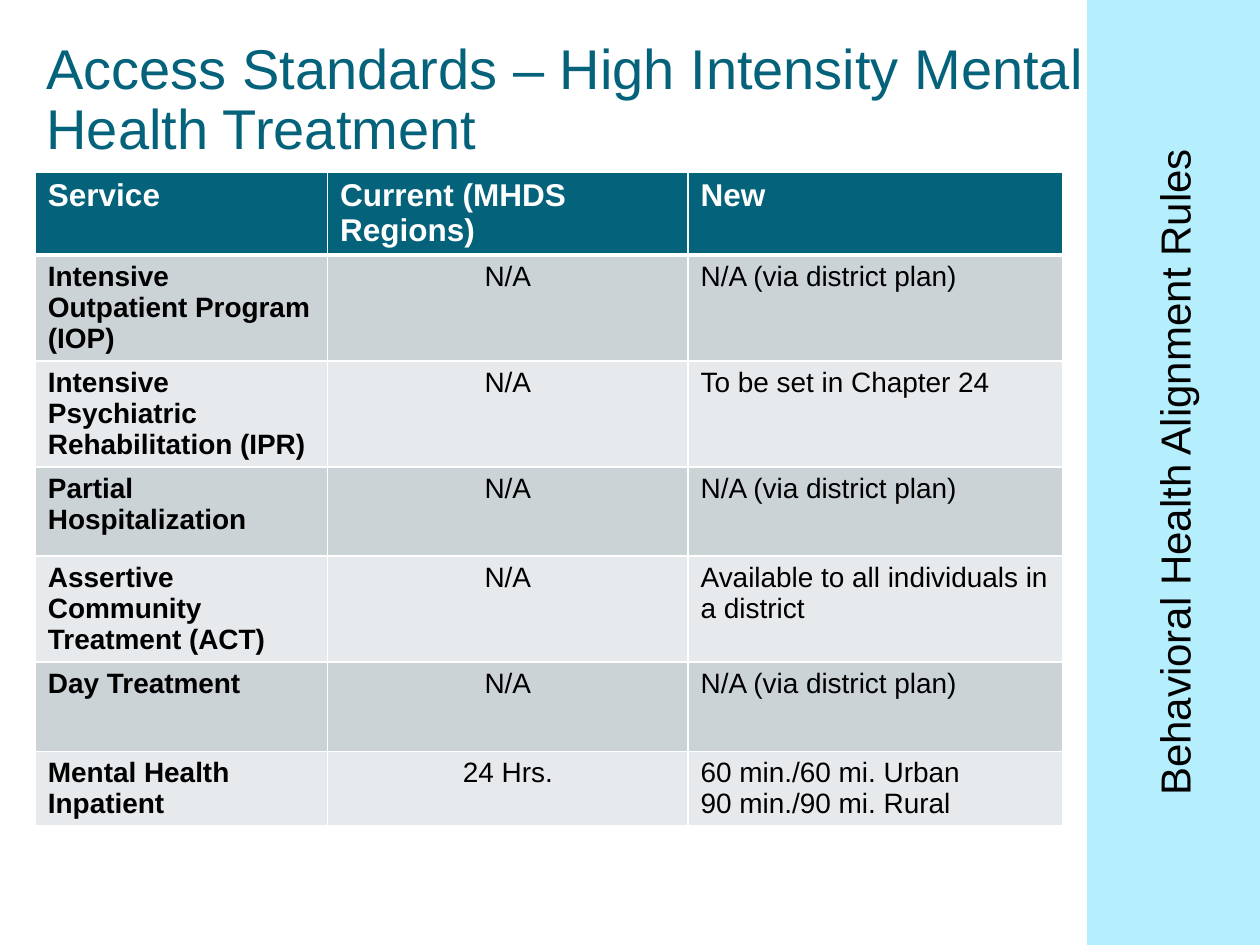
"""Build the access standards slide for high intensity mental health treatment."""
import pptx
import pptx.util
import pptx.dml.color
import pptx.enum.shapes
import pptx.enum.text
import pptx.oxml
import pptx.oxml.ns

Pt = pptx.util.Pt
ALIGN = pptx.enum.text.PP_ALIGN
ANCHOR = pptx.enum.text.MSO_ANCHOR

COLORS = {
    "teal": "04627A",
    "band": "CCD3D7",
    "light": "E7EAEC",
    "side": "B5EEFD",
    "white": "FFFFFF",
    "black": "000000",
}
FONT = "Arial"
TITLE = "Access Standards – High Intensity Mental Health Treatment"
SIDE_TITLE = "Behavioral Health Alignment Rules"
ROWS = [
    ("Service", "Current (MHDS Regions)", "New"),
    ("Intensive Outpatient Program (IOP)", "N/A", "N/A (via district plan)"),
    ("Intensive Psychiatric Rehabilitation (IPR)", "N/A", "To be set in Chapter 24"),
    ("Partial Hospitalization", "N/A", "N/A (via district plan)"),
    ("Assertive Community Treatment (ACT)", "N/A", "Available to all individuals in a district"),
    ("Day Treatment", "N/A", "N/A (via district plan)"),
    ("Mental Health Inpatient", "24 Hrs.", "60 min./60 mi. Urban\n90 min./90 mi. Rural"),
]
COLUMN_WIDTHS = [167, 206, 214]
ROW_HEIGHTS = [47, 60, 60, 51, 60, 51, 42]
SLIDE_WIDTH, SLIDE_HEIGHT = 720, 540
SIDE_WIDTH = 98.6


def rgb(name):
    return pptx.dml.color.RGBColor.from_string(COLORS[name])


def write(paragraph, text, size, color, bold=False, alignment=ALIGN.LEFT):
    paragraph.alignment = alignment
    run = paragraph.add_run()
    run.text = text
    run.font.name = FONT
    run.font.size = Pt(size)
    run.font.bold = bold
    run.font.color.rgb = rgb(color)


def set_borders(cell, bottom_width):
    properties = cell._tc.get_or_add_tcPr()
    for side, width in (("L", 1), ("R", 1), ("T", 1), ("B", bottom_width)):
        properties.append(pptx.oxml.parse_xml(
            f'<a:ln{side} {pptx.oxml.ns.nsdecls("a")} w="{Pt(width)}"><a:solidFill>'
            f'<a:srgbClr val="{COLORS["white"]}"/></a:solidFill></a:ln{side}>'))


def add_title(slide):
    title = slide.shapes.title
    title.left, title.top, title.width, title.height = Pt(19.4), Pt(17.3), Pt(625), Pt(81.4)
    frame = title.text_frame
    frame.word_wrap = True
    frame.auto_size = pptx.enum.text.MSO_AUTO_SIZE.NONE
    frame.vertical_anchor = ANCHOR.MIDDLE
    frame.paragraphs[0].line_spacing = 0.9
    write(frame.paragraphs[0], TITLE, 32, "teal")


def add_standards_table(slide):
    table = slide.shapes.add_table(
        len(ROWS), len(COLUMN_WIDTHS), Pt(20.2), Pt(98.2),
        Pt(sum(COLUMN_WIDTHS)), Pt(sum(ROW_HEIGHTS))).table
    for column, width in zip(table.columns, COLUMN_WIDTHS):
        column.width = Pt(width)
    for row_index, (row, height) in enumerate(zip(ROWS, ROW_HEIGHTS)):
        table.rows[row_index].height = Pt(height)
        header = row_index == 0
        fill = "teal" if header else ("light", "band")[row_index % 2]
        for column_index, text in enumerate(row):
            cell = table.cell(row_index, column_index)
            set_borders(cell, 3 if header else 1)
            cell.fill.solid()
            cell.fill.fore_color.rgb = rgb(fill)
            centered = column_index == 1 and not header
            for line_index, line in enumerate(text.split("\n")):
                frame = cell.text_frame
                paragraph = frame.add_paragraph() if line_index else frame.paragraphs[0]
                write(paragraph, line, 18 if header else 16,
                      "white" if header else "black",
                      header or column_index == 0,
                      ALIGN.CENTER if centered else ALIGN.LEFT)


def add_side_band(slide):
    left = SLIDE_WIDTH - (SIDE_WIDTH + SLIDE_HEIGHT) / 2
    top = (SLIDE_HEIGHT - SIDE_WIDTH) / 2
    band = slide.shapes.add_shape(
        pptx.enum.shapes.MSO_SHAPE.RECTANGLE,
        Pt(left), Pt(top), Pt(SLIDE_HEIGHT), Pt(SIDE_WIDTH))
    band.rotation = 270
    band.shadow.inherit = False
    band.fill.solid()
    band.fill.fore_color.rgb = rgb("side")
    band.line.color.rgb = rgb("side")
    band.line.width = Pt(1)
    band.text_frame.word_wrap = True
    band.text_frame.vertical_anchor = ANCHOR.MIDDLE
    write(band.text_frame.paragraphs[0], SIDE_TITLE, 24, "black", alignment=ALIGN.CENTER)


def main():
    presentation = pptx.Presentation()
    presentation.slide_width = Pt(SLIDE_WIDTH)
    presentation.slide_height = Pt(SLIDE_HEIGHT)
    slide = presentation.slides.add_slide(presentation.slide_layouts[5])
    add_title(slide)
    add_standards_table(slide)
    add_side_band(slide)
    presentation.save("out.pptx")


if __name__ == "__main__":
    main()
